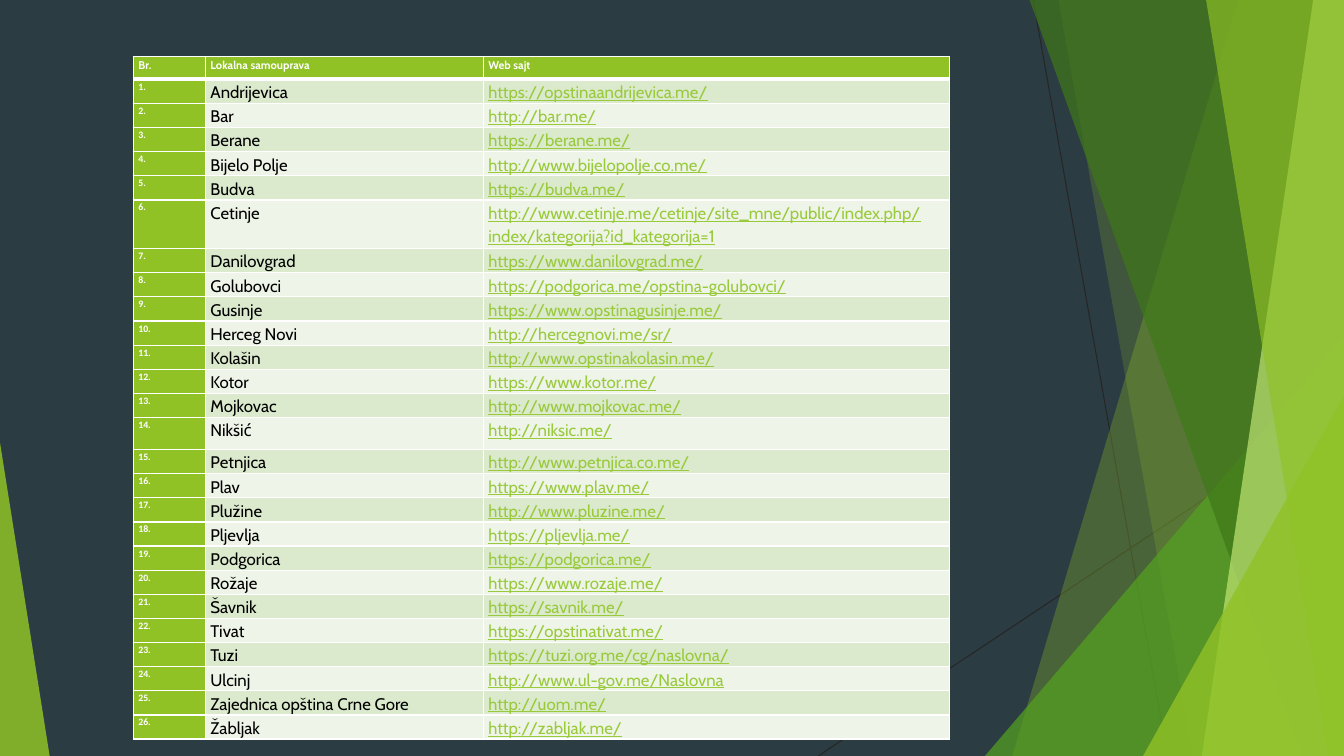
from collections import namedtuple
from dataclasses import dataclass

from lxml import etree
from pptx import Presentation
from pptx import util as u
from pptx.dml.color import RGBColor
from pptx.enum import shapes
from pptx.oxml.ns import qn

Pt = u.Pt
Box = namedtuple("Box", "left top width height")
Style = namedtuple("Style", "font size color bold underline")


@dataclass(frozen=True)
class Theme:
    night: str = "2C3C43"
    line: str = "262626"
    lime: str = "90C226"
    green: str = "54A021"
    forest: str = "3F7819"
    pale: str = "C0E474"
    border: str = "FFFFFF"
    bands: tuple = ("DBE9CD", "EEF4E8")
    heading: Style = Style("Cabin", 8, "FFFFFF", True, False)
    number: Style = Style("Calibri", 7, "FFFFFF", True, False)
    name: Style = Style("Cabin", 12, "000000", False, False)
    link: Style = Style("Cabin", 12, "99CA3C", False, True)


THEME = Theme()
HEADINGS = ("Br.", "Lokalna samouprava", "Web sajt")
SITES = [
    ("Andrijevica", "https://opstinaandrijevica.me/"),
    ("Bar", "http://bar.me/"),
    ("Berane", "https://berane.me/"),
    ("Bijelo Polje", "http://www.bijelopolje.co.me/"),
    ("Budva", "https://budva.me/"),
    ("Cetinje", "http://www.cetinje.me/cetinje/site_mne/public/index.php/index/kategorija?id_kategorija=1"),
    ("Danilovgrad", "https://www.danilovgrad.me/"),
    ("Golubovci", "https://podgorica.me/opstina-golubovci/"),
    ("Gusinje", "https://www.opstinagusinje.me/"),
    ("Herceg Novi", "http://hercegnovi.me/sr/"),
    ("Kolašin", "http://www.opstinakolasin.me/"),
    ("Kotor", "https://www.kotor.me/"),
    ("Mojkovac", "http://www.mojkovac.me/"),
    ("Nikšić", "http://niksic.me/"),
    ("Petnjica", "http://www.petnjica.co.me/"),
    ("Plav", "https://www.plav.me/"),
    ("Plužine", "http://www.pluzine.me/"),
    ("Pljevlja", "https://pljevlja.me/"),
    ("Podgorica", "https://podgorica.me/"),
    ("Rožaje", "https://www.rozaje.me/"),
    ("Šavnik", "https://savnik.me/"),
    ("Tivat", "https://opstinativat.me/"),
    ("Tuzi", "https://tuzi.org.me/cg/naslovna/"),
    ("Ulcinj", "http://www.ul-gov.me/Naslovna"),
    ("Zajednica opština Crne Gore", "http://uom.me/"),
    ("Žabljak", "http://zabljak.me/"),
]
COLUMN_WIDTHS = (51.5, 198.5, 333)
HEADING_HEIGHT, ROW_HEIGHT = 16.4, 17.25
TALL_ROWS = {6: 34.8, 14: 22.9}


def paint(shape, color, opacity):
    shape.shadow.inherit = False
    shape.line.fill.background()
    shape.fill.solid()
    shape.fill.fore_color.rgb = RGBColor.from_string(color)
    for tint in shape.element.spPr.iter(qn("a:srgbClr")):
        etree.SubElement(tint, qn("a:alpha"), val=str(opacity * 1000))


def add_line(page, start, end):
    line = page.shapes.add_connector(
        shapes.MSO_CONNECTOR.STRAIGHT, *(Pt(value) for value in start + end))
    line.line.color.rgb = RGBColor.from_string(THEME.line)
    line.line.width = Pt(0.75)
    etree.SubElement(line.element.spPr, qn("a:effectLst"))


def add_facet(page, box, top_span, bottom_span, color, opacity):
    right, bottom = box.left + box.width, box.top + box.height
    corners = [(right - top_span, box.top), (right, box.top),
               (right, bottom), (right - bottom_span, bottom)]
    points = [(Pt(x), Pt(y)) for x, y in corners]
    builder = page.shapes.build_freeform(*points[0])
    builder.add_line_segments(points[1:], close=True)
    paint(builder.convert_to_shape(), color, opacity)


def add_corner(page, box, peak, width, height, color, opacity):
    left = box.left + peak * (box.width - width)
    top = box.top + box.height - height
    corner = page.shapes.add_shape(
        shapes.MSO_SHAPE.ISOSCELES_TRIANGLE, Pt(left), Pt(top), Pt(width), Pt(height))
    corner.adjustments[0] = peak
    paint(corner, color, opacity)


def add_backdrop(page, box):
    right, bottom = box.left + box.width, box.top + box.height
    add_line(page, (right - 222, box.top), (right - 126, bottom))
    add_line(page, (right, bottom - 250), (right - 375.5, bottom))
    add_facet(page, box, 75.5, 237, THEME.lime, 30)
    add_facet(page, box, 204, 108, THEME.lime, 20)
    add_corner(page, box, 1, 256.5, 300, THEME.green, 72)
    add_facet(page, box, 224.5, 30.5, THEME.forest, 70)
    add_facet(page, box, 22, 101.5, THEME.pale, 70)
    add_facet(page, box, 98.5, 11, THEME.lime, 65)
    add_corner(page, box, 1, 143.5, 257, THEME.lime, 80)
    add_corner(page, box, 0, 35.5, 224, THEME.lime, 85)


def set_borders(cell, top, bottom):
    properties = cell._tc.get_or_add_tcPr()
    sides = {"lnL": 1, "lnR": 1, "lnT": top, "lnB": bottom}
    for index, (side, width) in enumerate(sides.items()):
        edge = etree.Element(qn(f"a:{side}"), w=str(Pt(width)))
        fill = etree.SubElement(edge, qn("a:solidFill"))
        etree.SubElement(fill, qn("a:srgbClr"), val=THEME.border)
        properties.insert(index, edge)


def fill_cell(cell, words, style, color):
    cell.margin_left = cell.margin_right = Pt(3.6)
    cell.margin_top = cell.margin_bottom = 0
    cell.fill.solid()
    cell.fill.fore_color.rgb = RGBColor.from_string(color)
    para = cell.text_frame.paragraphs[0]
    para.line_spacing = 1.15
    para.space_after = Pt(10)
    span = para.add_run()
    span.text = words
    span.font.name = style.font
    span.font.size = Pt(style.size)
    span.font.bold = style.bold
    span.font.underline = style.underline
    span.font.color.rgb = RGBColor.from_string(style.color)


def add_directory(page, box):
    rows = [HEADINGS] + [(f"{number}.", *site) for number, site in enumerate(SITES, 1)]
    frame = page.shapes.add_table(len(rows), len(HEADINGS), *(Pt(value) for value in box))
    table = frame.table
    table.horz_banding = False
    for column, width in zip(table.columns, COLUMN_WIDTHS):
        column.width = Pt(width)
    for index, entries in enumerate(rows):
        if index == 0:
            height = HEADING_HEIGHT
            styles = (THEME.heading,) * 3
            colors = (THEME.lime,) * 3
        else:
            height = TALL_ROWS.get(index, ROW_HEIGHT)
            styles = (THEME.number, THEME.name, THEME.link)
            band = THEME.bands[(index - 1) % 2]
            colors = (THEME.lime, band, band)
        table.rows[index].height = Pt(height)
        for column, (words, style, color) in enumerate(zip(entries, styles, colors)):
            cell = table.cell(index, column)
            fill_cell(cell, words, style, color)
            set_borders(cell, 3 if index == 1 else 1, 3 if index == 0 else 1)


def main():
    deck = Presentation()
    deck.slide_width, deck.slide_height = Pt(960), Pt(540)
    page = deck.slides.add_slide(deck.slide_layouts[6])
    page.background.fill.solid()
    page.background.fill.fore_color.rgb = RGBColor.from_string(THEME.night)
    add_backdrop(page, Box(0, 0, 960, 540))
    add_directory(page, Box(95.25, 40.25, 583, 488))
    deck.save("out.pptx")


if __name__ == "__main__":
    main()
